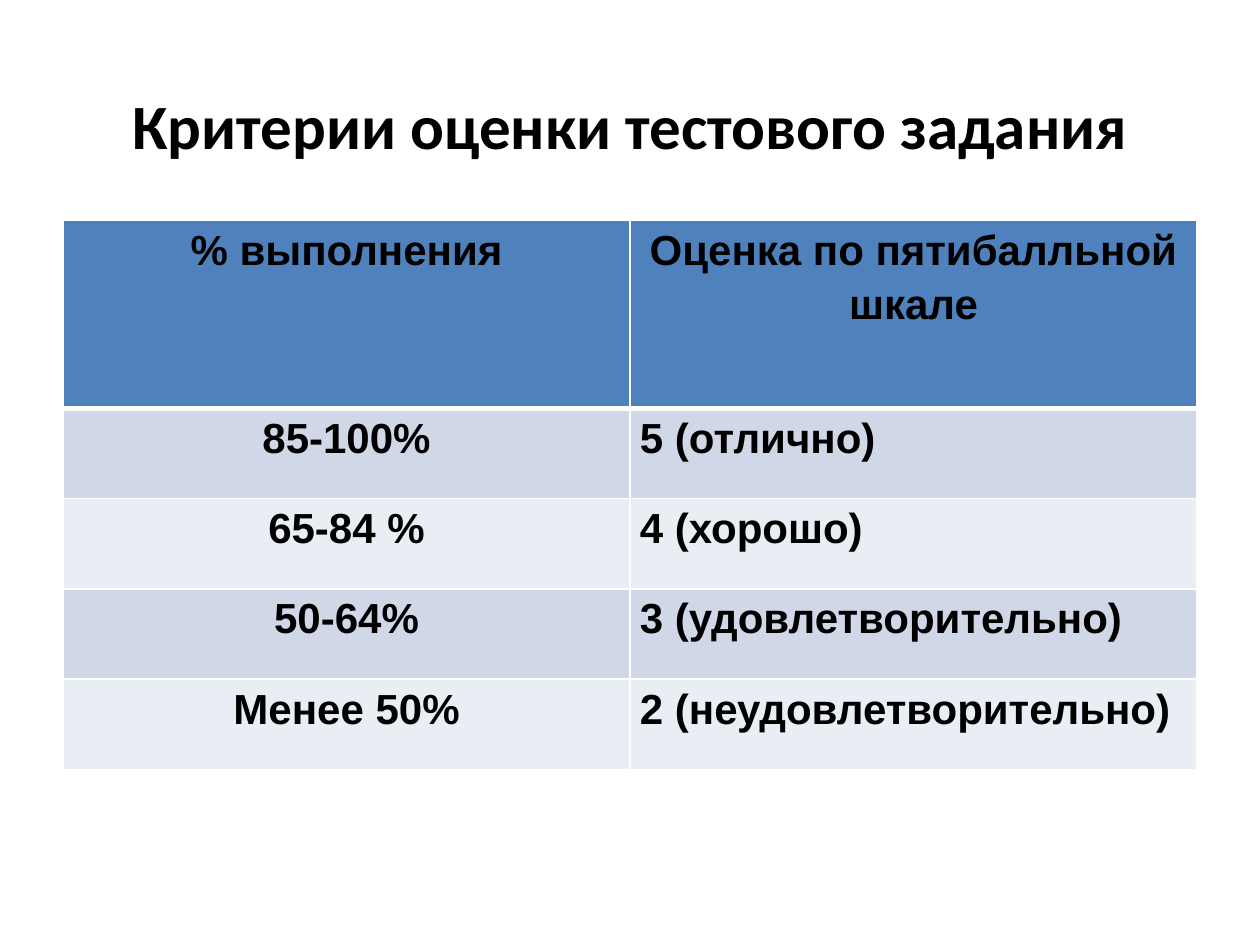
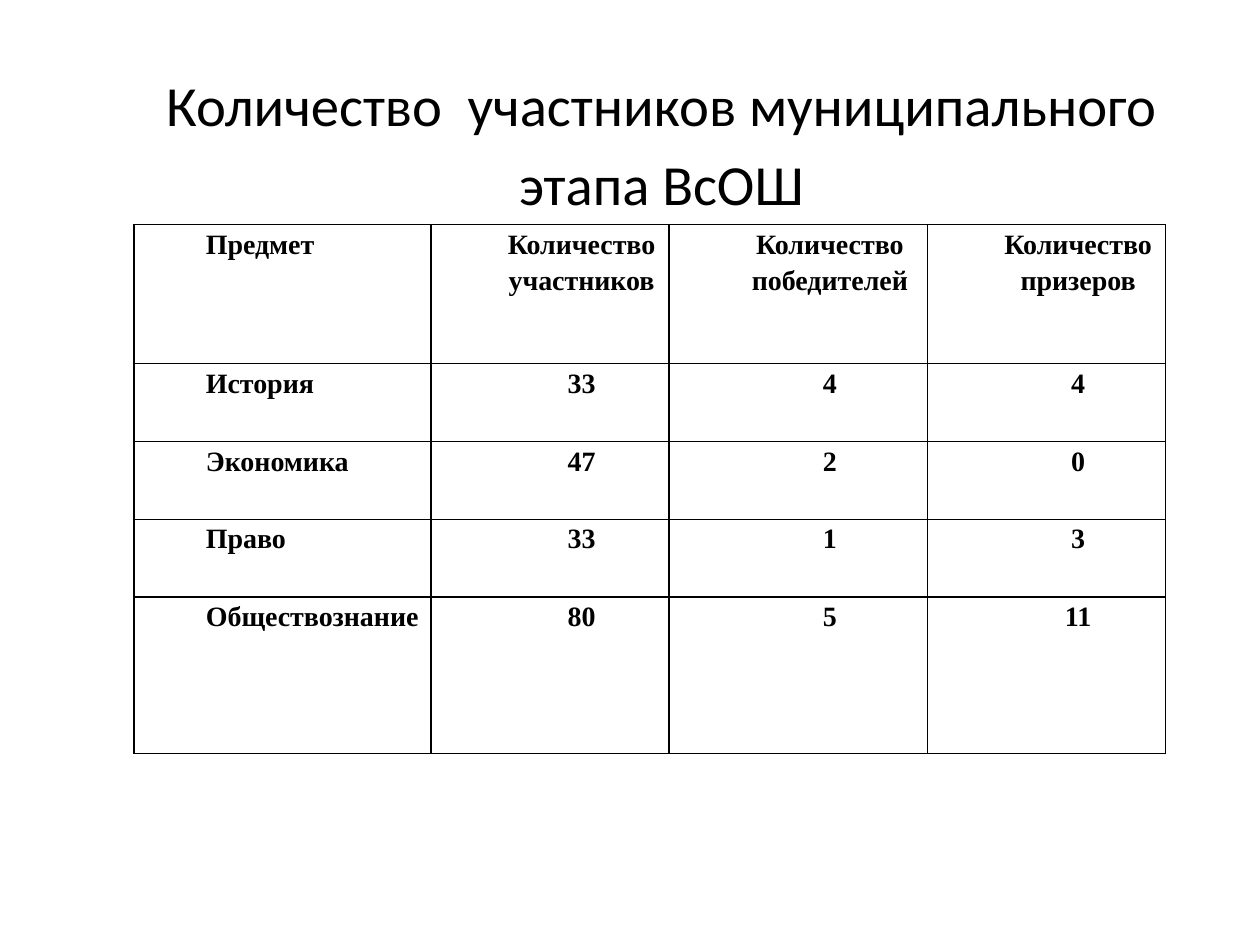
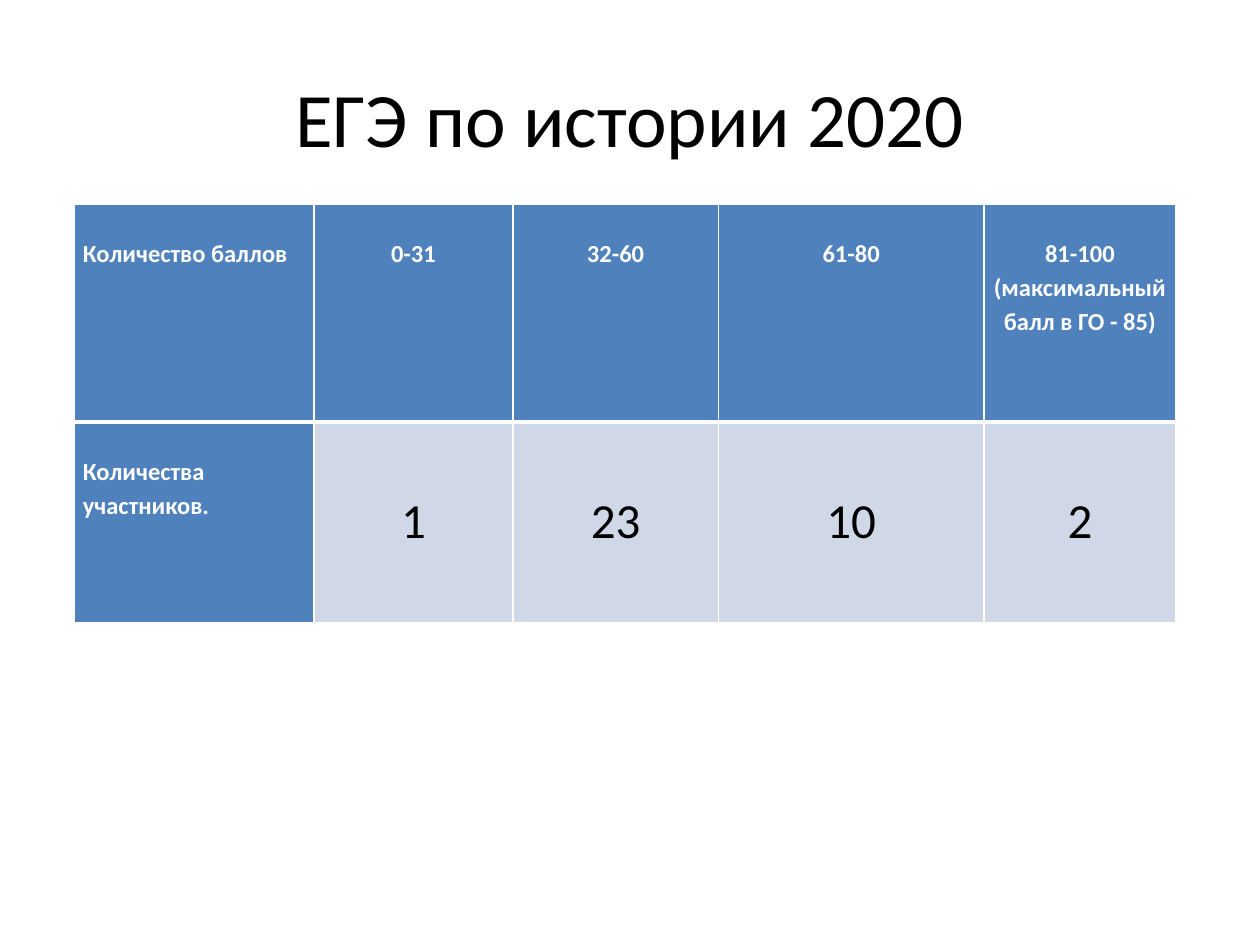
from lxml.etree import SubElement
from pptx import Presentation
from pptx.dml.color import RGBColor
from pptx.enum.text import MSO_ANCHOR, PP_ALIGN
from pptx.oxml.ns import qn
from pptx.util import Cm, Pt

BLACK = RGBColor(0x00, 0x00, 0x00)
WHITE = RGBColor(0xFF, 0xFF, 0xFF)
BLUE = RGBColor(0x4F, 0x81, 0xBD)
BAND_DARK = RGBColor(0xD0, 0xD8, 0xE8)
BAND_LIGHT = RGBColor(0xE9, 0xED, 0xF4)

CENTER, JUSTIFY, LEFT = PP_ALIGN.CENTER, PP_ALIGN.JUSTIFY, PP_ALIGN.LEFT
LINE_SPACING = 1.15
INDENT = 1.27


class SlideBuilder:
    title_font = "Calibri"

    def __init__(self):
        self.deck = Presentation()
        self.deck.slide_width = Cm(25.4)
        self.deck.slide_height = Cm(19.05)
        self.slide = None

    def new_slide(self):
        self.slide = self.deck.slides.add_slide(self.deck.slide_layouts[6])

    def format_text(self, frame, font, size, color, bold, align, spacing):
        for para in frame.paragraphs:
            para.alignment = align
            para.line_spacing = spacing
            for span in para.runs:
                span.font.name = font
                span.font.size = Pt(size)
                span.font.bold = bold
                span.font.color.rgb = color

    def title(self, text, size, top, bold=False, spacing=LINE_SPACING, indent=0):
        box = self.slide.shapes.add_textbox(Cm(1.27), Cm(0.76), Cm(22.86), Cm(3.18))
        frame = box.text_frame
        frame.word_wrap = True
        frame.vertical_anchor = MSO_ANCHOR.TOP
        frame.margin_top = Cm(top)
        frame.margin_bottom = 0
        frame.margin_left = Cm(0.25 + indent)
        frame.text = text
        self.format_text(frame, self.title_font, size, BLACK, bold, CENTER, spacing)

    def table(self, left, top, widths, heights, texts):
        frame = self.slide.shapes.add_table(
            len(heights), len(widths), Cm(left), Cm(top), Cm(sum(widths)), Cm(sum(heights)))
        table = frame.table
        table.first_row = False
        table.horz_banding = False
        for column, width in zip(table.columns, widths):
            column.width = Cm(width)
        for row, height, row_texts in zip(table.rows, heights, texts):
            row.height = Cm(height)
            for cell, text in zip(row.cells, row_texts):
                cell.text_frame.text = text
        return table

    def style_cell(self, cell, font, size, align, color=BLACK, bold=True, fill=None,
                   inset=0.18, indent=0, top=0):
        cell.margin_left = Cm(inset + indent)
        cell.margin_right = Cm(inset)
        cell.margin_top = Cm(top)
        cell.margin_bottom = 0
        self.format_text(cell.text_frame, font, size, color, bold, align, LINE_SPACING)
        if fill is None:
            cell.fill.background()
        else:
            cell.fill.solid()
            cell.fill.fore_color.rgb = fill

    def borders(self, table, color, header_width=1):
        for row_index, row in enumerate(table.rows):
            widths = {
                "a:lnL": 1,
                "a:lnR": 1,
                "a:lnT": header_width if row_index == 1 else 1,
                "a:lnB": header_width if row_index == 0 else 1,
            }
            for cell in row.cells:
                properties = cell._tc.get_or_add_tcPr()
                for position, (tag, width) in enumerate(widths.items()):
                    line = SubElement(properties, qn(tag), w=str(Pt(width)))
                    properties.insert(position, line)
                    solid = SubElement(line, qn("a:solidFill"))
                    SubElement(solid, qn("a:srgbClr"), val=str(color))


def add_criteria(builder):
    builder.new_slide()
    builder.title("Критерии оценки тестового задания", 36, top=0.76, bold=True)
    texts = [
        ("% выполнения", "Оценка по пятибалльной шкале"),
        ("85-100%", "5 (отлично)"),
        ("65-84 %", "4 (хорошо)"),
        ("50-64%", "3 (удовлетворительно)"),
        ("Менее 50%", "2 (неудовлетворительно)"),
    ]
    table = builder.table(1.27, 4.45, [11.43] * 2, [3.78] + [1.82] * 4, texts)
    fills = [BLUE] + [BAND_DARK, BAND_LIGHT] * 2
    for row_index, (row, fill) in enumerate(zip(table.rows, fills)):
        for column_index, cell in enumerate(row.cells):
            align = JUSTIFY if row_index and column_index else CENTER
            builder.style_cell(cell, "Arial", 24, align, fill=fill, inset=0.2)
    builder.borders(table, WHITE, header_width=3)


def add_participants(builder):
    builder.new_slide()
    builder.title("Количество  участников муниципального этапа ВсОШ", 32.4, top=0.45,
                  indent=INDENT)
    texts = [
        ("Предмет", "Количество участников", "Количество победителей", "Количество призеров"),
        ("История", "33", "4", "4"),
        ("Экономика", "47", "2", "0"),
        ("Право", "33", "1", "3"),
        ("Обществознание", "80", "5", "11"),
    ]
    table = builder.table(
        2.7, 4.53, [5.99, 4.8, 5.21, 4.8], [2.8, 1.57, 1.57, 1.57, 3.15], texts)
    for row in table.rows:
        for column_index, cell in enumerate(row.cells):
            align = CENTER if column_index else LEFT
            builder.style_cell(cell, "Times New Roman", 16, align, indent=INDENT)
    builder.borders(table, BLACK)


def add_exam(builder):
    builder.new_slide()
    builder.title("ЕГЭ по истории 2020", 44, top=0.66, spacing=1.0)
    texts = [
        ("Количество баллов", "0-31", "32-60", "61-80",
         "81-100\n(максимальный балл в ГО - 85)"),
        ("Количества участников.", "1", "23", "10", "2"),
    ]
    table = builder.table(1.5, 4.11, [4.83, 4.01, 4.14, 5.36, 3.86], [4.4, 4.04], texts)
    for row_index, row in enumerate(table.rows):
        for column_index, cell in enumerate(row.cells):
            align = CENTER if column_index else JUSTIFY
            if row_index and column_index:
                builder.style_cell(cell, "Calibri", 28, align, bold=False,
                                   fill=BAND_DARK, inset=0.17, top=1.23)
            else:
                builder.style_cell(cell, "Calibri", 14, align, color=WHITE,
                                   fill=BLUE, inset=0.17, top=0.62)
    builder.borders(table, WHITE, header_width=3)


def main():
    builder = SlideBuilder()
    add_criteria(builder)
    add_participants(builder)
    add_exam(builder)
    builder.deck.save("out.pptx")


if __name__ == "__main__":
    main()
